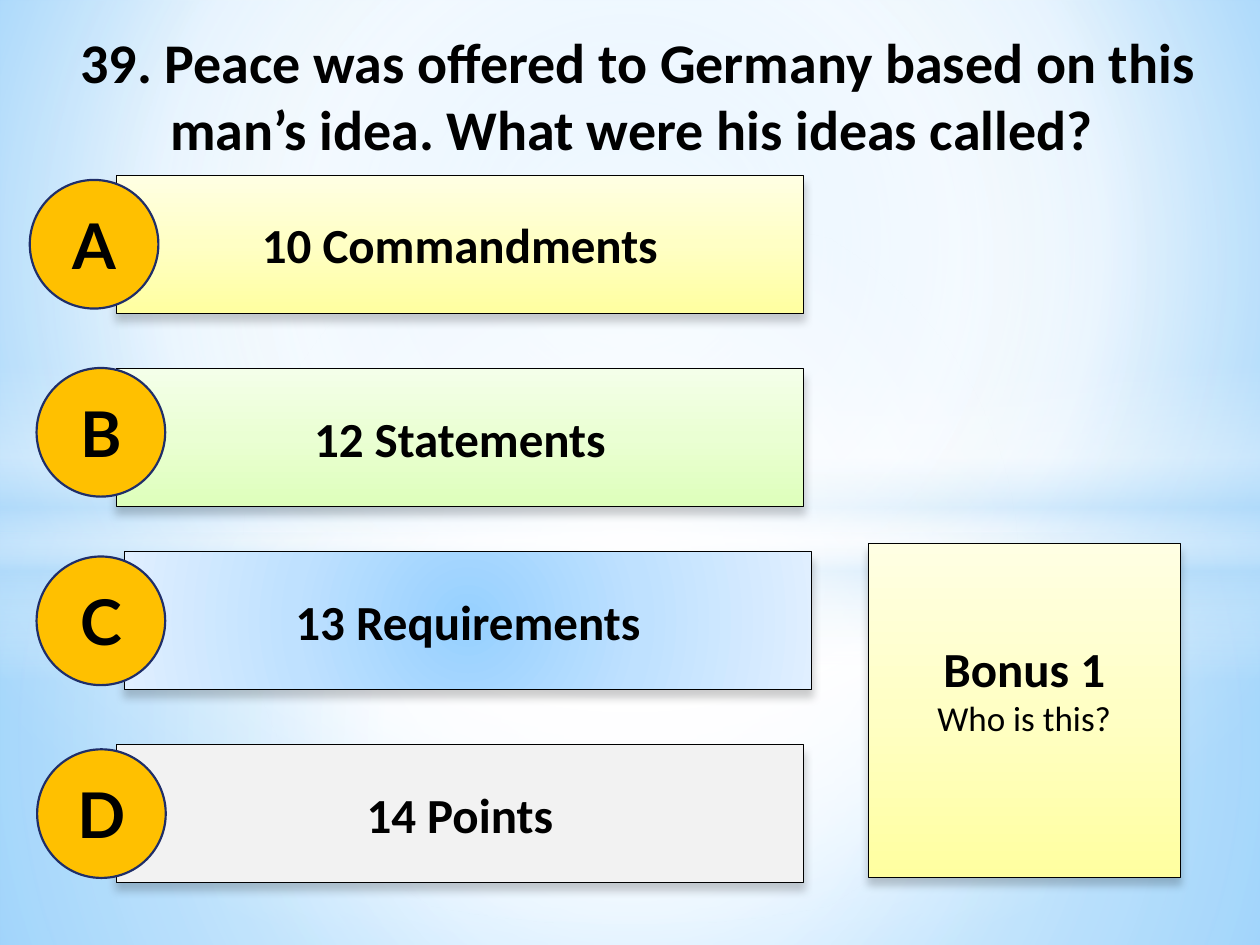
from lxml.etree import SubElement
from pptx import Presentation
from pptx.dml.color import RGBColor
from pptx.enum.shapes import MSO_SHAPE as SHAPE
from pptx.enum.text import MSO_ANCHOR as ANCHOR, PP_ALIGN as ALIGN
from pptx.oxml import parse_xml
from pptx.oxml.ns import nsdecls, qn
from pptx.util import Pt


def paint(holder, fill, stops, direction):
    fill.background()
    marks = "".join(
        f'<a:gs pos="{pos * 1000}"><a:srgbClr val="{color}">'
        f'<a:alpha val="{alpha * 1000}"/></a:srgbClr></a:gs>'
        for pos, color, alpha in stops)
    if isinstance(direction, int):
        course = f'<a:lin ang="{direction * 60000}" scaled="0"/>'
    else:
        left, top, right, bottom = [side * 1000 for side in direction]
        course = (f'<a:path path="circle"><a:fillToRect l="{left}" t="{top}" '
                  f'r="{right}" b="{bottom}"/></a:path>')
    gradient = parse_xml(f'<a:gradFill {nsdecls("a")} rotWithShape="1">'
                         f'<a:gsLst>{marks}</a:gsLst>{course}</a:gradFill>')
    empty = next(holder.iter(qn("a:noFill")))
    empty.getparent().replace(empty, gradient)


def write(para, text, size, font="Calibri", bold=True):
    para.alignment = ALIGN.CENTER
    span = para.add_run()
    span.text = text
    span.font.name = font
    span.font.size = Pt(size)
    span.font.bold = bold
    span.font.color.rgb = RGBColor.from_string("000000")


deck = Presentation()
deck.slide_width, deck.slide_height = Pt(720), Pt(540)
page = deck.slides.add_slide(deck.slide_layouts[5])
CENTER = (50, 50, 50, 50)

background = page.background.fill
background.background()
paint(page.element, background,
      [(0, "9ED5FF", 100), (60, "FFFFFF", 100), (100, "5BB9FF", 100)],
      (20, 10, 20, 60))

glows = [
    (SHAPE.RECTANGLE, 304.5, 235.5, CENTER,
     [(0, "FFFFFF", 91), (37, "FFFFFF", 76), (100, "B4DCFA", 79)]),
    (SHAPE.RECTANGLE, 0, 304.5, CENTER,
     [(0, "FFFFFF", 89), (48, "FFFFFF", 62), (100, "B4DCFA", 79)]),
    (SHAPE.RECTANGLE, 209, 180, 90,
     [(0, "FFFFFF", 0), (29, "FFFFFF", 30), (45, "B4DCFA", 40),
      (55, "FFFFFF", 26), (65, "B4DCFA", 60), (100, "FFFFFF", 0)]),
    (SHAPE.OVAL, 126, 402, CENTER, [(0, "FFFFFF", 100), (54, "FFFFFF", 0)]),
]
for kind, top, height, direction, stops in glows:
    glow = page.shapes.add_shape(kind, 0, Pt(top), Pt(720), Pt(height))
    glow.shadow.inherit = False
    glow.line.fill.background()
    paint(glow.element.spPr, glow.fill, stops, direction)

title = page.shapes.title
title.left, title.top, title.width, title.height = Pt(18.7), Pt(12.2), Pt(692), Pt(85)
title.text_frame.word_wrap = True
title.text_frame.vertical_anchor = ANCHOR.TOP
write(title.text_frame.paragraphs[0],
      "39. Peace was offered to Germany based on this man’s idea. "
      "What were his ideas called? ", 32)
page.shapes.element.append(title.element)

yellow = (["FFFFA0", "FFFFC5", "FFFFE3"], 270)
green = (["DEFFBB", "EAFFD3", "F4FFE9"], 270)
blue = (["96D0FF", "BFE1FF", "E0EFFF"], CENTER)
gray = (["F2F2F2"], None)
panels = [
    (66.3, 100, 393, 79, yellow, ["10 Commandments"]),
    (66.3, 210.5, 393, 79, green, ["12 Statements"]),
    (70.9, 315, 393, 79, blue, ["13 Requirements"]),
    (66.3, 425.3, 393, 79, gray, ["14 Points"]),
    (496, 310.5, 178.5, 191, yellow, ["Bonus 1", "Who is this?"]),
]
badges = [("A", 17, 102.8), ("B", 20.9, 210.3), ("C", 20.9, 318), ("D", 21.2, 428.2)]

for left, top, width, height, (colors, direction), lines in panels:
    panel = page.shapes.add_shape(SHAPE.RECTANGLE, Pt(left), Pt(top), Pt(width), Pt(height))
    if direction is None:
        panel.fill.solid()
        panel.fill.fore_color.rgb = RGBColor.from_string(colors[0])
    else:
        stops = [(i * 50, color, 100) for i, color in enumerate(colors)]
        paint(panel.element.spPr, panel.fill, stops, direction)
    panel.line.color.rgb = RGBColor.from_string("000000")
    panel.line.width = Pt(0.5)
    panel.shadow.inherit = False
    effects = panel.element.spPr.find(qn("a:effectLst"))
    shadow = SubElement(effects, qn("a:outerShdw"), blurRad=str(Pt(5)),
                        dist=str(Pt(4)), dir="5400000", rotWithShape="0")
    shade = SubElement(shadow, qn("a:srgbClr"), val="000000")
    SubElement(shade, qn("a:alpha"), val="20000")
    frame = panel.text_frame
    frame.vertical_anchor = ANCHOR.MIDDLE
    write(frame.paragraphs[0], lines[0], 28)
    for line in lines[1:]:
        frame.margin_bottom = Pt(28.6)
        write(frame.add_paragraph(), line, 20, bold=False)

for letter, left, top in badges:
    badge = page.shapes.add_shape(SHAPE.OVAL, Pt(left), Pt(top), Pt(73.5), Pt(73.5))
    badge.shadow.inherit = False
    badge.fill.solid()
    badge.fill.fore_color.rgb = RGBColor.from_string("FFC000")
    badge.line.color.rgb = RGBColor.from_string("1F2E69")
    badge.line.width = Pt(1.25)
    badge.text_frame.vertical_anchor = ANCHOR.MIDDLE
    write(badge.text_frame.paragraphs[0], letter, 36, "Lato")

deck.save("out.pptx")
